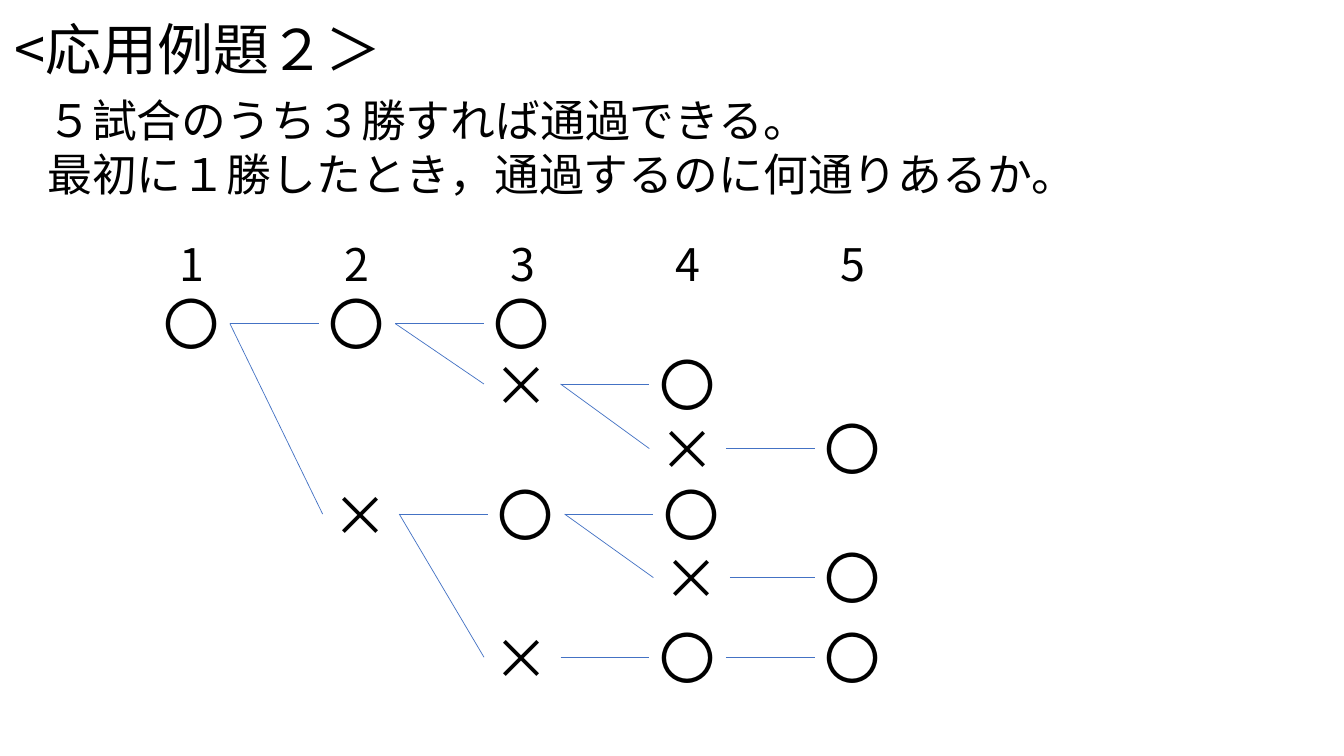
from lxml.etree import SubElement
from pptx import Presentation
from pptx.dml.color import RGBColor
from pptx.enum.shapes import MSO_CONNECTOR
from pptx.enum.text import MSO_AUTO_SIZE
from pptx.oxml.ns import qn
from pptx.util import Inches, Pt

FONT = "Noto Sans CJK JP"
FIRST_COLUMN, COLUMN_STEP = 1.52, 1.64
ROW_CENTERS = [3.21, 3.81, 4.45, 5.1, 5.73, 6.52]
MARK_WIDTH, MARK_HEIGHT = 0.76, 0.77
LOWER_ROWS, LOWER_SHIFT = (3, 4), 0.04
LAST_COLUMN = 4

# Each game: mark, column, row, index of the game before it.
GAMES = [
    ("〇", 0, 0, None),
    ("〇", 1, 0, 0),
    ("〇", 2, 0, 1),
    ("×", 2, 1, 1),
    ("〇", 3, 1, 3),
    ("×", 3, 2, 3),
    ("〇", 4, 2, 5),
    ("×", 1, 3, 0),
    ("〇", 2, 3, 7),
    ("〇", 3, 3, 8),
    ("×", 3, 4, 8),
    ("〇", 4, 4, 10),
    ("×", 2, 5, 7),
    ("〇", 3, 5, 12),
    ("〇", 4, 5, 13),
]


def color(value):
    """Turn a hex string into a colour."""
    return RGBColor.from_string(value)


def add_text(s, box, lines, size, wrap=False):
    """Add a text box with one paragraph per line."""
    sp = s.shapes.add_textbox(*(Inches(v) for v in box))
    tf = sp.text_frame
    tf.word_wrap = wrap
    tf.auto_size = MSO_AUTO_SIZE.SHAPE_TO_FIT_TEXT
    for i, line in enumerate(lines):
        p = tf.add_paragraph() if i else tf.paragraphs[0]
        r = p.add_run()
        r.text = line
        r.font.size = Pt(size)
        r.font.name = FONT
        r.font.color.rgb = color("000000")
        SubElement(r.font._element, qn("a:ea"), typeface=FONT)


def add_branch(s, start, end):
    """Add a thin line between two points."""
    ends = (Inches(v) for v in (*start, *end))
    cxn = s.shapes.add_connector(MSO_CONNECTOR.STRAIGHT, *ends)
    cxn.line.color.rgb = color("4472C4")
    cxn.line.width = Pt(0.5)
    SubElement(cxn._element.spPr, qn("a:effectLst"))


def mark_left(column, row):
    """Return the left edge of a mark in the tree."""
    shifted = row in LOWER_ROWS and column < LAST_COLUMN
    return FIRST_COLUMN + column * COLUMN_STEP + (LOWER_SHIFT if shifted else 0)


def add_game(s, mark, column, row, parent):
    """Add a mark and the branch from the game before it."""
    left, center = mark_left(column, row), ROW_CENTERS[row]
    box = (left, center - MARK_HEIGHT / 2, MARK_WIDTH, MARK_HEIGHT)
    add_text(s, box, [mark], 40)
    if parent is not None:
        _, from_column, from_row, _ = GAMES[parent]
        start = (mark_left(from_column, from_row) + MARK_WIDTH, ROW_CENTERS[from_row])
        add_branch(s, start, (left, center))


def main():
    """Build the slide and save it."""
    prs = Presentation()
    prs.slide_width, prs.slide_height = Inches(13.33), Inches(7.5)
    s = prs.slides.add_slide(prs.slide_layouts[6])
    add_text(s, (0.05, 0.09, 4.06, 0.77), ["<応用例題２＞"], 40, wrap=True)
    question = ["５試合のうち３勝すれば通過できる。", "最初に１勝したとき，通過するのに何通りあるか。"]
    add_text(s, (0.37, 0.87, 10.52, 1.18), question, 32)
    for column in range(LAST_COLUMN + 1):
        left = FIRST_COLUMN + 0.16 + column * COLUMN_STEP
        add_text(s, (left, 2.3, 0.45, 0.64), [str(column + 1)], 32)
    for game in GAMES:
        add_game(s, *game)
    prs.save("out.pptx")


if __name__ == "__main__":
    main()
